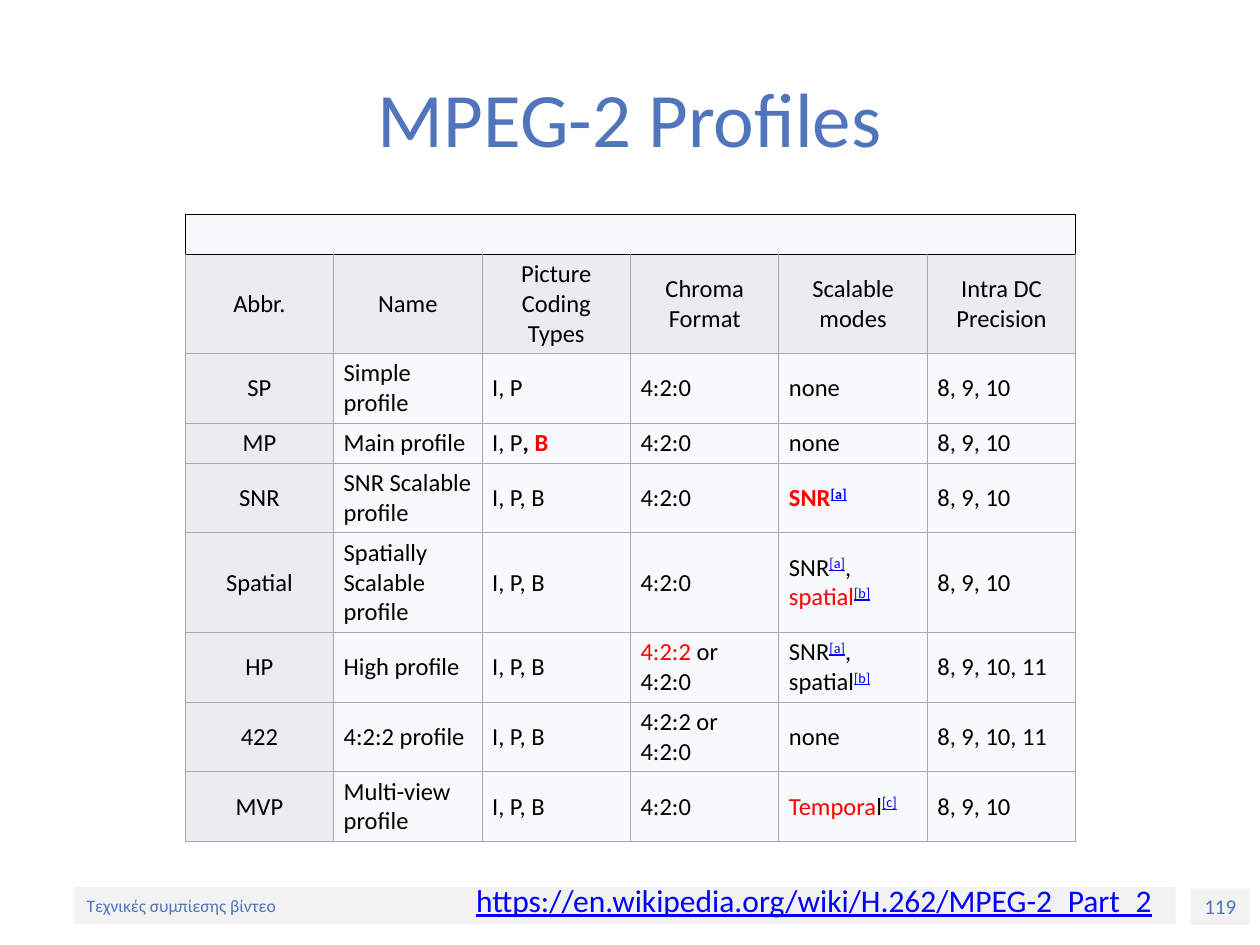
from lxml import etree
from pptx import Presentation
from pptx.dml.color import RGBColor
from pptx.enum.shapes import MSO_SHAPE
from pptx.enum.text import MSO_ANCHOR, PP_ALIGN
from pptx.oxml.ns import qn
from pptx.util import Inches, Pt

RECTANGLE = MSO_SHAPE.RECTANGLE
MIDDLE = MSO_ANCHOR.MIDDLE
LEFT, CENTER = PP_ALIGN.LEFT, PP_ALIGN.CENTER

TITLE_ONLY = 5
FONT = "Calibri"
BLUE, BLACK, RED, LINK = "5075BC", "000000", "FF0000", "0000FF"
BAR, HEADER, BODY, RULE = "F2F2F2", "EAECF0", "F8F9FA", "A2A9B1"

TABLE_LEFT, TABLE_TOP, TABLE_WIDTH = 1.47, 1.7, 7.07
LINE_HEIGHT, ROW_PADDING = 0.24, 0.07
ROW_LINES = [1, 3, 2, 1, 2, 3, 2, 2, 2]
CELL_MARGINS = {"margin_left": 0.08, "margin_right": 0.08,
                "margin_top": 0.04, "margin_bottom": 0.04}

STYLES = {
    "plain": {},
    "bold": {"bold": True},
    "red": {"color": RED},
    "red bold": {"color": RED, "bold": True},
    "note": {"color": LINK, "underline": True, "raised": True},
    "note bold": {"color": LINK, "underline": True, "raised": True, "bold": True},
}
NOTE_A, NOTE_B, NOTE_C = [(f"[{letter}]", "note") for letter in "abc"]

# A cell is a string, or a list of strings and (text, style) pairs.
PROFILES = [
    ["Abbr.", "Name", "Picture Coding Types", "Chroma Format",
     "Scalable modes", "Intra DC Precision"],
    ["SP", "Simple profile", "I, P", "4:2:0", "none", "8, 9, 10"],
    ["MP", "Main profile", ["I, P", (", ", "bold"), ("B", "red bold")],
     "4:2:0", "none", "8, 9, 10"],
    ["SNR", "SNR Scalable profile", "I, P, B", "4:2:0",
     [("SNR", "red bold"), ("[a]", "note bold")], "8, 9, 10"],
    ["Spatial", "Spatially Scalable profile", "I, P, B", "4:2:0",
     ["SNR", NOTE_A, ", ", ("spatial", "red"), NOTE_B], "8, 9, 10"],
    ["HP", "High profile", "I, P, B", [("4:2:2", "red"), " or 4:2:0"],
     ["SNR", NOTE_A, ", spatial", NOTE_B], "8, 9, 10, 11"],
    ["422", "4:2:2 profile", "I, P, B", "4:2:2 or 4:2:0", "none", "8, 9, 10, 11"],
    ["MVP", "Multi-view profile", "I, P, B", "4:2:0",
     [("Tempora", "red"), "l", NOTE_C], "8, 9, 10"],
]


def rgb(color):
    return RGBColor.from_string(color)


def paint(target, color):
    target.fill.solid()
    target.fill.fore_color.rgb = rgb(color)


def add_run(paragraph, text, size, color=BLACK, raised=False, **font_format):
    run = paragraph.add_run()
    run.text = text
    run.font.color.rgb = rgb(color)
    for attribute, value in {"name": FONT, "size": Pt(size), **font_format}.items():
        setattr(run.font, attribute, value)
    if raised:
        run.font._element.set("baseline", "30000")


def add_title(slide, text):
    title = slide.shapes.title
    title.left, title.top, title.width, title.height = map(Inches, (0.5, 0.3, 9, 1.25))
    title.text_frame.vertical_anchor = MIDDLE
    paragraph = title.text_frame.paragraphs[0]
    paragraph.alignment = CENTER
    add_run(paragraph, text, 44, BLUE)


def add_footer_bar(slide, bounds, text, size, alignment):
    bar = slide.shapes.add_shape(RECTANGLE, *map(Inches, bounds))
    bar.shadow.inherit = False
    paint(bar, BAR)
    bar.line.fill.background()
    bar.text_frame.vertical_anchor = MIDDLE
    paragraph = bar.text_frame.paragraphs[0]
    paragraph.alignment = alignment
    add_run(paragraph, text, size, BLUE)


def add_source_address(slide, address):
    box = slide.shapes.add_textbox(*map(Inches, (3.68, 6.94, 7.72, 0.4)))
    box.text_frame.word_wrap = True
    add_run(box.text_frame.paragraphs[0], address, 18, LINK, underline=True)


def set_borders(cell, colors):
    """Draw the left, right, top and bottom borders, in that order."""
    properties = cell._tc.get_or_add_tcPr()
    for side, color in zip("LRTB", colors):
        border = etree.SubElement(properties, qn(f"a:ln{side}"), w=str(Pt(0.75)))
        fill = etree.SubElement(border, qn("a:solidFill"))
        etree.SubElement(fill, qn("a:srgbClr"), val=color)


def format_cell(cell, fill, borders):
    set_borders(cell, borders)
    paint(cell, fill)
    cell.vertical_anchor = MIDDLE
    for attribute, value in CELL_MARGINS.items():
        setattr(cell, attribute, Inches(value))


def fill_cell(cell, content, alignment):
    paragraph = cell.text_frame.paragraphs[0]
    paragraph.alignment = alignment
    for part in [content] if isinstance(content, str) else content:
        text, style = (part, "plain") if isinstance(part, str) else part
        add_run(paragraph, text, 14, **STYLES[style])


def add_profile_table(slide):
    heights = [lines * LINE_HEIGHT + ROW_PADDING for lines in ROW_LINES]
    column_count = len(PROFILES[0])
    table = slide.shapes.add_table(
        len(heights), column_count,
        *map(Inches, (TABLE_LEFT, TABLE_TOP, TABLE_WIDTH, sum(heights)))).table
    table.first_row = table.horz_banding = False
    for column in table.columns:
        column.width = Inches(TABLE_WIDTH / column_count)
    for row, height in zip(table.rows, heights):
        row.height = Inches(height)

    caption_cells = table.rows[0].cells
    for cell in caption_cells:
        format_cell(cell, BODY, [BLACK] * 4)
        paragraph = cell.text_frame.paragraphs[0]
        etree.SubElement(paragraph._p, qn("a:endParaRPr"), sz="1400")
    table.cell(0, 0).merge(table.cell(0, column_count - 1))

    for row, profile in enumerate(PROFILES, start=1):
        top = BLACK if row == 1 else RULE
        for column, content in enumerate(profile):
            is_header = row == 1 or column == 0
            cell = table.cell(row, column)
            format_cell(cell, HEADER if is_header else BODY, [RULE, RULE, top, RULE])
            fill_cell(cell, content, CENTER if is_header else LEFT)


def main():
    presentation = Presentation()
    presentation.slide_width, presentation.slide_height = Inches(10), Inches(7.5)
    slide = presentation.slides.add_slide(presentation.slide_layouts[TITLE_ONLY])
    add_footer_bar(slide, (9.45, 7.05, 0.47, 0.29), "119", 12, CENTER)
    add_footer_bar(slide, (0.59, 7.04, 8.74, 0.29), "Τεχνικές συμπίεσης βίντεο", 10, LEFT)
    add_title(slide, "MPEG-2 Profiles")
    add_profile_table(slide)
    add_source_address(slide, "https://en.wikipedia.org/wiki/H.262/MPEG-2_Part_2")
    presentation.save("out.pptx")


if __name__ == "__main__":
    main()
